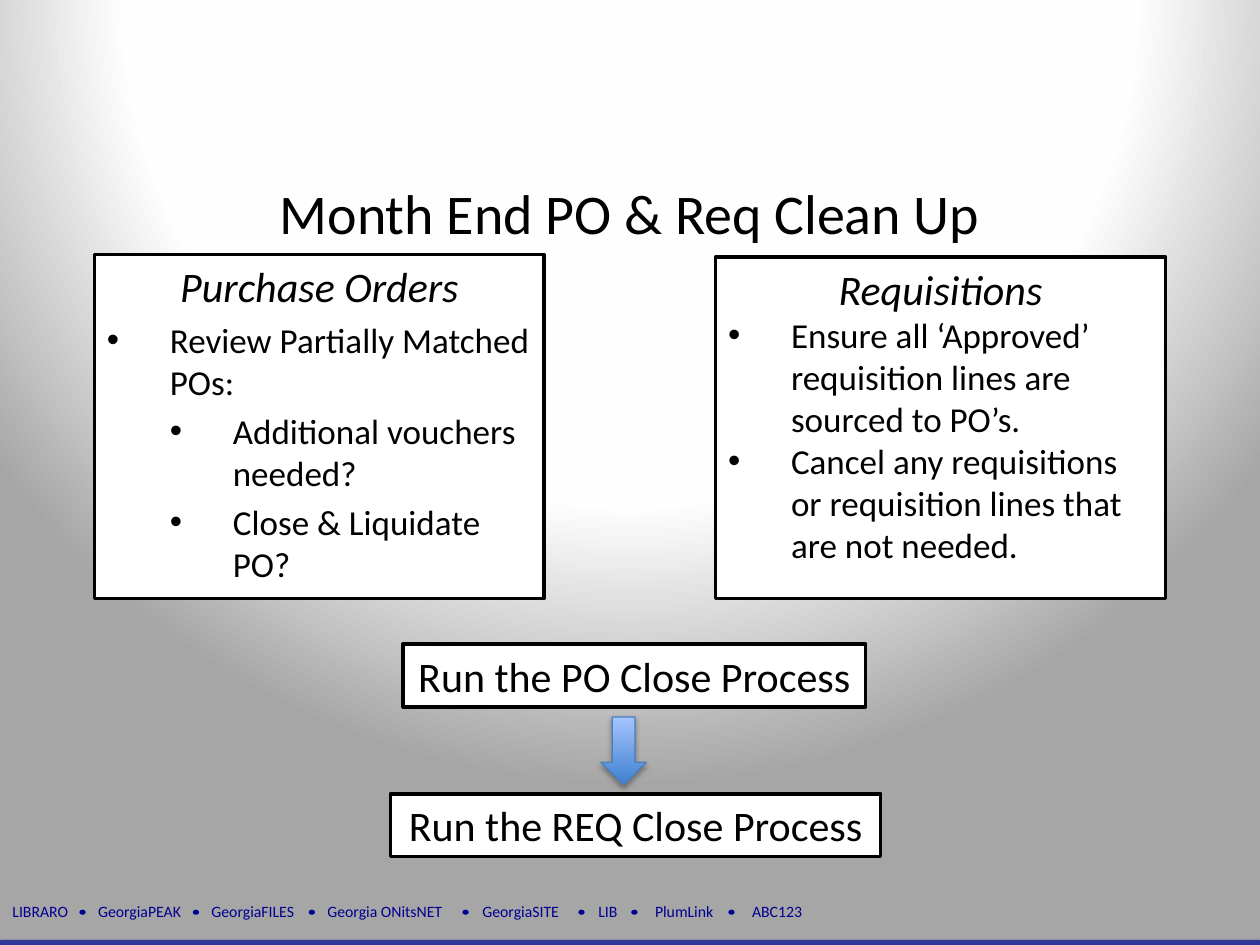
from pptx import Presentation
from pptx.dml.color import RGBColor
from pptx.enum.shapes import MSO_SHAPE as Shape
from pptx.enum.text import MSO_ANCHOR as Anchor, PP_ALIGN as Align
from pptx.oxml import parse_xml
from pptx.oxml.ns import nsdecls, qn
from pptx.oxml.xmlchemy import OxmlElement
from pptx.util import Inches, Pt

COLORS = {"black": "000000", "white": "FFFFFF", "near_white": "FEFEFE",
          "gray": "A6A6A6", "navy": "000090", "bar": "2E3698",
          "arrow_dark": "3F80CE", "arrow_light": "A4C4FF", "arrow_edge": "4B7EBC"}
FONT = "Calibri"
CELL = 0.1  # the slide is a grid of 100 columns by 75 rows

# Service name and its start column, then the column of the dot before it
SERVICES = [("LIBRARO", 1, None), ("GeorgiaPEAK", 7.8, 6.3),
            ("GeorgiaFILES", 16.8, 15.3), ("Georgia ONitsNET", 26, 24.5),
            ("GeorgiaSITE", 38.3, 36.7), ("LIB", 47.5, 45.9),
            ("PlumLink", 52, 50.1), ("ABC123", 59.7, 57.8)]


def rgb(name):
    return RGBColor.from_string(COLORS[name])


def grid(*cells):
    return [Inches(round(cell * CELL, 3)) for cell in cells]


def add_block(slide, kind, at, fill, line=None, line_width=2):
    block = slide.shapes.add_shape(kind, *grid(*at))
    block.shadow.inherit = False
    if fill:
        block.fill.solid()
        block.fill.fore_color.rgb = rgb(fill)
    if line:
        block.line.color.rgb = rgb(line)
        block.line.width = Pt(line_width)
    else:
        block.line.fill.background()
    return block


def add_shadow(block):
    effects = block._element.spPr.find(qn("a:effectLst"))
    effects.append(parse_xml(
        f'<a:outerShdw {nsdecls("a")} blurRad="{Pt(3.1)}" dist="{Pt(1.8)}" '
        f'dir="5400000" rotWithShape="0"><a:srgbClr val="{COLORS["black"]}">'
        '<a:alpha val="35000"/></a:srgbClr></a:outerShdw>'))


def write(frame, text, size, color="black", italic=False, align=Align.LEFT,
          bullet_level=None, before=0, tabs=(), first=False):
    """Add one paragraph with its format to a text frame."""
    line = frame.paragraphs[0] if first else frame.add_paragraph()
    line.alignment = align
    if not first:
        line.space_before = Pt(before)
    props = line._p.get_or_add_pPr()
    if bullet_level is not None:
        line.level = bullet_level
        props.set("marL", str(Inches(0.5 * (bullet_level + 1))))
        props.set("indent", str(Inches(-0.5)))
        props.append(parse_xml(f'<a:buFont {nsdecls("a")} typeface="Arial"/>'))
        props.append(parse_xml(f'<a:buChar {nsdecls("a")} char="•"/>'))
    if tabs:
        stops = OxmlElement("a:tabLst")
        for stop in grid(*tabs):
            tab = OxmlElement("a:tab")
            tab.set("pos", str(stop))
            tab.set("algn", "l")
            stops.append(tab)
        props.append(stops)
    run = line.add_run()
    run.text = text
    run.font.name, run.font.size, run.font.italic = FONT, Pt(size), italic
    run.font.color.rgb = rgb(color)


def paint_background(slide):
    slide.background.fill.gradient()
    gradient = slide.element.find(".//" + qn("a:gradFill"))
    stops = "".join(
        f'<a:gs pos="{pos}000"><a:srgbClr val="{COLORS[name]}"/></a:gs>'
        for pos, name in ((0, "white"), (64, "near_white"), (100, "gray")))
    gradient.getparent().replace(gradient, parse_xml(
        f'<a:gradFill {nsdecls("a")} rotWithShape="1"><a:gsLst>{stops}</a:gsLst>'
        '<a:path path="circle"><a:fillToRect l="50000" t="-80000" r="50000" '
        'b="180000"/></a:path></a:gradFill>'))


def add_footer(slide):
    bar = add_block(slide, Shape.ROUNDED_RECTANGLE, (0, 74.6, 100, 0.5), "bar")
    add_shadow(bar)
    names = slide.shapes.add_textbox(*grid(0, 71.1, 78.1, 2.5)).text_frame
    names.word_wrap = True
    start = SERVICES[0][1]
    write(names, "\t".join(name for name, _, _ in SERVICES), 9, "navy", first=True,
          tabs=[column - start for _, column, _ in SERVICES[1:]])
    for _, _, dot in SERVICES[1:]:
        add_block(slide, Shape.OVAL, (dot, 72.2, 0.5, 0.4), "navy")


def add_panel(slide, at, heading, points, before):
    panel = add_block(slide, Shape.RECTANGLE, at, "white", "black").text_frame
    panel.word_wrap = True
    panel.vertical_anchor = Anchor.TOP
    write(panel, heading, 24, italic=True, align=Align.CENTER, first=True)
    for level, point in points:
        write(panel, point, 20, bullet_level=level, before=before)


def add_step(slide, at, text):
    step = add_block(slide, Shape.RECTANGLE, at, "white", "black").text_frame
    step.word_wrap = False
    step.vertical_anchor = Anchor.TOP
    write(step, text, 24, align=Align.CENTER, first=True)


def add_down_arrow(slide, at):
    arrow = add_block(slide, Shape.DOWN_ARROW, at, None, "arrow_edge", 0.75)
    arrow.fill.gradient()
    arrow.fill.gradient_angle = 90
    for stop, name in zip(arrow.fill.gradient_stops, ("arrow_dark", "arrow_light")):
        stop.color.rgb = rgb(name)
    add_shadow(arrow)


def main():
    deck = Presentation()
    deck.slide_width, deck.slide_height = grid(100, 75)
    slide = deck.slides.add_slide(deck.slide_layouts[6])
    paint_background(slide)
    add_footer(slide)

    # Title
    title = slide.shapes.add_textbox(*grid(7.5, 13.7, 85, 5.5)).text_frame
    title.word_wrap = True
    write(title, "Month End PO & Req Clean Up", 32, align=Align.CENTER, first=True)

    # Clean-up checklists
    add_panel(slide, (56.8, 20.4, 35.7, 27.1), "Requisitions", [
        (0, "Ensure all ‘Approved’ requisition lines are sourced to PO’s."),
        (0, "Cancel any requisitions or requisition lines that are not needed."),
    ], before=0)
    add_panel(slide, (7.5, 20.2, 35.7, 27.3), "Purchase Orders", [
        (0, "Review Partially Matched POs:"),
        (1, "Additional vouchers needed?"),
        (1, "Close & Liquidate PO?"),
    ], before=4)

    # Closing processes
    add_step(slide, (32, 51.1, 36.7, 5), "Run the PO Close Process")
    add_step(slide, (31, 63, 38.9, 5), "Run the REQ Close Process")
    add_down_arrow(slide, (47.7, 56.9, 3.6, 5.4))

    deck.save("out.pptx")


if __name__ == "__main__":
    main()
